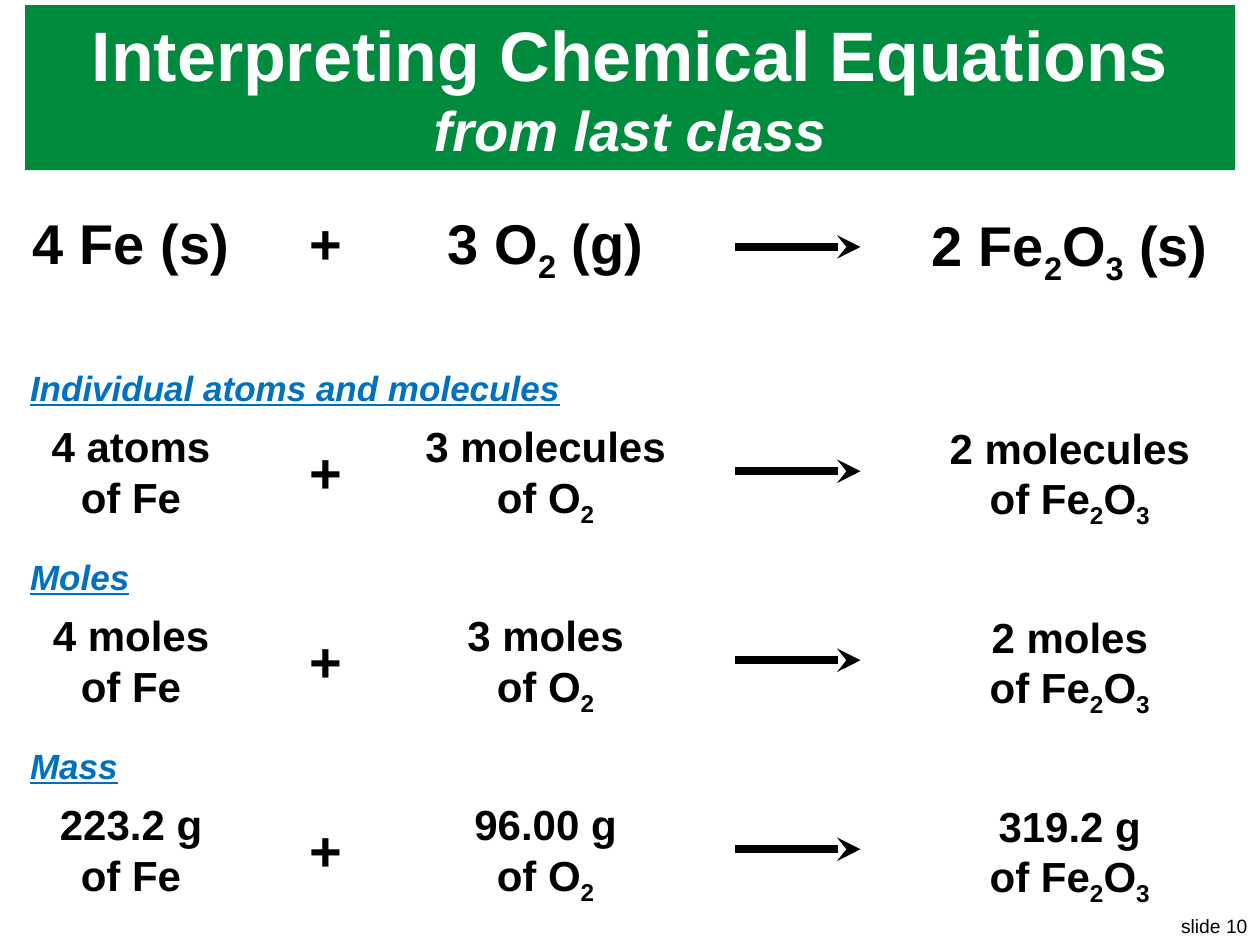
import dataclasses

import pptx
import pptx.dml.color
import pptx.enum.shapes
import pptx.enum.text
import pptx.oxml.ns
import pptx.util
from lxml import etree

Inches, Pt = pptx.util.Inches, pptx.util.Pt
ALIGN = pptx.enum.text.PP_ALIGN


@dataclasses.dataclass(frozen=True)
class Theme:
    font: str = "Arial"
    banner: str = "008A3E"
    banner_text: str = "FFFFFF"
    ink: str = "000000"
    heading: str = "0070C0"
    title_size: int = 40
    equation_size: int = 32
    amount_size: int = 24
    heading_size: int = 20
    footer_size: int = 11
    arrow_width: float = 4.5


THEME = Theme()

# Centres of the columns and the left edges of arrow and headings
IRON, PLUS, OXYGEN, OXIDE = 1.04, 2.59, 4.33, 8.49
ARROW_LEFT, ARROW_LENGTH = 5.83, 1.0
HEADING_LEFT = 0.14
EQUATION_TOP = 1.61
FIRST_ROW, ROW_STEP = 2.86, 1.5
LARGE_HEIGHT, AMOUNT_HEIGHT = 0.64, 0.91

# Heading with its width, then the amount and text width for each substance
INTERPRETATIONS = [
    ("Individual atoms and molecules", 4.44,
     [("4 atoms", 1.47), ("3 molecules", 2.13), ("2 molecules", 2.13)]),
    ("Moles", 1.0, [("4 moles", 1.46), ("3 moles", 1.46), ("2 moles", 1.51)]),
    ("Mass", 0.9, [("223.2 g", 1.34), ("96.00 g", 1.34), ("319.2 g", 1.51)]),
]
SUBSTANCES = [(IRON, "Fe", 0), (OXYGEN, "O_2", 0), (OXIDE, "Fe_2O_3", 0.01)]


def rgb(code):
    return pptx.dml.color.RGBColor.from_string(code)


def style_run(run, size, color, bold=True, italic=False, underline=False):
    font = run.font
    font.name, font.size = THEME.font, Pt(size)
    font.color.rgb = rgb(color)
    font.bold, font.italic, font.underline = bold, italic, underline


def add_formula(paragraph, formula, size, color, **style):
    """Write the formula; the character after each underscore is a subscript."""
    plain, *marked = formula.split("_")
    pieces = [(plain, False)]
    for part in marked:
        pieces += [(part[0], True), (part[1:], False)]
    for text, lowered in pieces:
        if text:
            run = paragraph.add_run()
            run.text = text
            style_run(run, size, color, **style)
            if lowered:
                run.font._element.set("baseline", "-25000")


def add_label(slide, lines, left, top, width, height, size,
              color=THEME.ink, align=ALIGN.CENTER, **style):
    label = slide.shapes.add_textbox(*map(Inches, (left, top, width, height)))
    frame = label.text_frame
    frame.word_wrap = False
    frame.auto_size = pptx.enum.text.MSO_AUTO_SIZE.SHAPE_TO_FIT_TEXT
    for index, line in enumerate(lines):
        paragraph = frame.add_paragraph() if index else frame.paragraphs[0]
        paragraph.alignment = align
        add_formula(paragraph, line, size, color, **style)


def add_centred(slide, lines, centre, top, width, height, size):
    add_label(slide, lines, centre - width / 2, top, width, height, size)


def add_large(slide, formula, centre, top, width):
    add_centred(slide, [formula], centre, top, width, LARGE_HEIGHT,
                THEME.equation_size)


def add_reaction_arrow(slide, y):
    arrow = slide.shapes.add_connector(
        pptx.enum.shapes.MSO_CONNECTOR.STRAIGHT, Inches(ARROW_LEFT), Inches(y),
        Inches(ARROW_LEFT + ARROW_LENGTH), Inches(y))
    arrow.line.color.rgb = rgb(THEME.ink)
    arrow.line.width = Pt(THEME.arrow_width)
    qn = pptx.oxml.ns.qn
    etree.SubElement(arrow.line._get_or_add_ln(), qn("a:tailEnd"), type="stealth")
    etree.SubElement(arrow._element.spPr, qn("a:effectLst"))


def add_banner(slide):
    banner = slide.shapes.title
    banner.left, banner.top = Inches(0.2), Inches(0.04)
    banner.width, banner.height = Inches(9.6), Inches(1.31)
    banner.fill.solid()
    banner.fill.fore_color.rgb = rgb(THEME.banner)
    frame = banner.text_frame
    frame.text = "Interpreting Chemical Equations\vfrom last class"
    frame.word_wrap = True
    frame.auto_size = pptx.enum.text.MSO_AUTO_SIZE.NONE
    frame.vertical_anchor = pptx.enum.text.MSO_ANCHOR.MIDDLE
    paragraph = frame.paragraphs[0]
    paragraph.alignment = ALIGN.CENTER
    title, subtitle = paragraph.runs
    style_run(title, THEME.title_size, THEME.banner_text)
    style_run(subtitle, THEME.equation_size, THEME.banner_text, italic=True)
    # The line break needs the title's size, or it stretches the first line
    qn = pptx.oxml.ns.qn
    line_break = paragraph._p.find(qn("a:br"))
    etree.SubElement(line_break, qn("a:rPr"), sz=str(THEME.title_size * 100))


def add_equation(slide):
    add_large(slide, "4 Fe (s)", IRON, EQUATION_TOP, 1.77)
    add_large(slide, "+", PLUS, EQUATION_TOP, 0.46)
    add_large(slide, "3 O_2 (g)", OXYGEN, EQUATION_TOP, 1.79)
    add_reaction_arrow(slide, EQUATION_TOP + 0.35)
    add_large(slide, "2 Fe_2O_3 (s)", OXIDE, EQUATION_TOP + 0.01, 2.45)


def add_interpretation(slide, top, heading, heading_width, amounts):
    add_label(slide, [heading], HEADING_LEFT, top, heading_width, 0.44,
              THEME.heading_size, THEME.heading, ALIGN.LEFT,
              italic=True, underline=True)
    for (centre, formula, drop), (amount, width) in zip(SUBSTANCES, amounts):
        add_centred(slide, [amount, f"of {formula}"], centre, top + 0.43 + drop,
                    width, AMOUNT_HEIGHT, THEME.amount_size)
    add_large(slide, "+", PLUS, top + 0.56, 0.46)
    add_reaction_arrow(slide, top + 0.88)


def main():
    deck = pptx.Presentation()
    deck.slide_width, deck.slide_height = Inches(10), Inches(7.5)
    slide = deck.slides.add_slide(deck.slide_layouts.get_by_name("Title Only"))
    add_banner(slide)
    add_equation(slide)
    for row, interpretation in enumerate(INTERPRETATIONS):
        add_interpretation(slide, FIRST_ROW + row * ROW_STEP, *interpretation)
    add_label(slide, ["slide 10"], 9.25, 7.21, 0.75, 0.29, THEME.footer_size,
              align=ALIGN.RIGHT, bold=False)
    deck.save("out.pptx")


if __name__ == "__main__":
    main()
